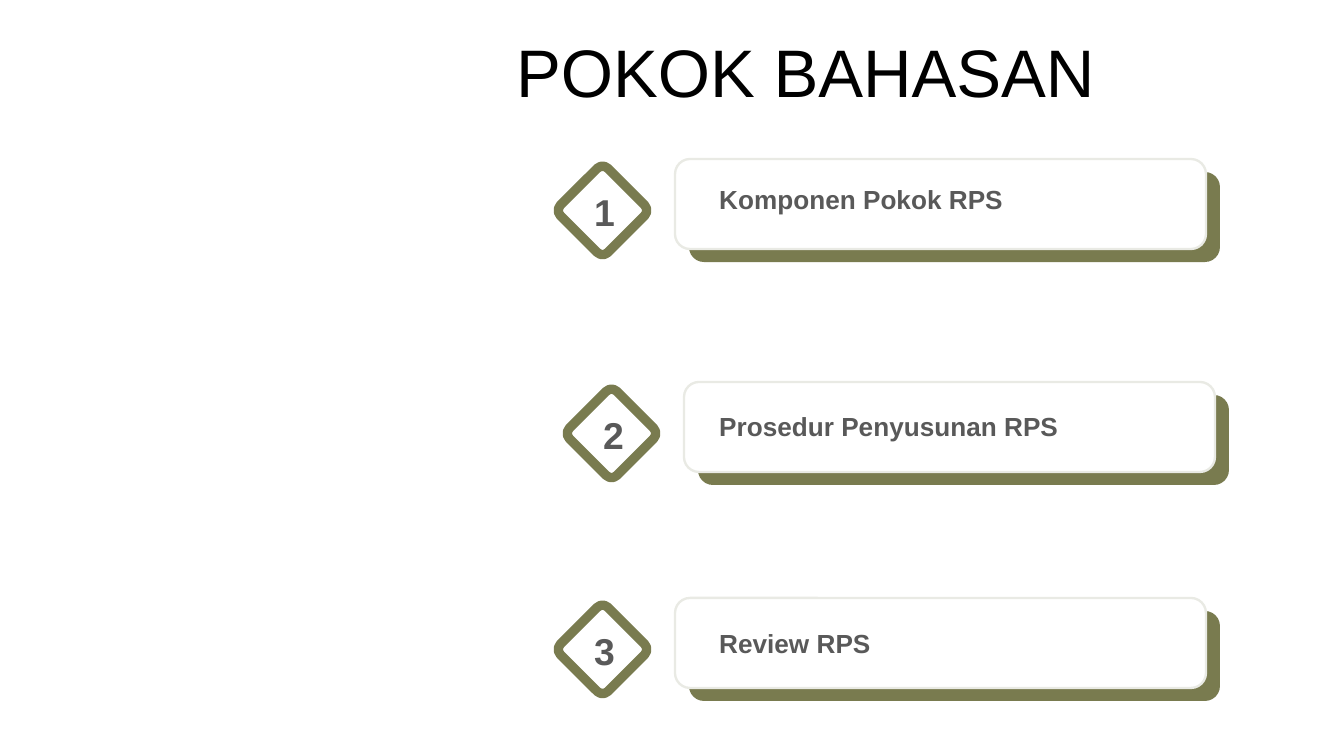
import pptx
import pptx.util
import pptx.dml.color
import pptx.enum.shapes
import pptx.enum.text

RGBColor = pptx.dml.color.RGBColor
ROUNDED = pptx.enum.shapes.MSO_SHAPE.ROUNDED_RECTANGLE
ALIGN = pptx.enum.text.PP_ALIGN

BLACK = RGBColor(0x00, 0x00, 0x00)
WHITE = RGBColor(0xFF, 0xFF, 0xFF)
OLIVE = RGBColor(0x79, 0x7B, 0x4F)
PALE = RGBColor(0xE9, 0xEA, 0xE4)
GRAY = RGBColor(0x59, 0x59, 0x59)

HEADING = "POKOK BAHASAN"
TOPICS = [
    {"caption": "Komponen Pokok RPS", "left": 569, "top": 159, "caption_top": 176, "caption_width": 485},
    {"caption": "Prosedur Penyusunan RPS", "left": 578, "top": 382, "caption_top": 403, "caption_width": 445},
    {"caption": "Review RPS", "left": 569, "top": 598, "caption_top": 620, "caption_width": 445},
]

CARD_DX, CARD_WIDTH, CARD_HEIGHT = 106, 531, 90
SHADOW_DX, SHADOW_DY = 14, 13
DIAMOND_DY, DIAMOND_SIZE = 18, 67
NUMBER_DX, NUMBER_DY, NUMBER_WIDTH, NUMBER_HEIGHT = 12, 23, 44, 59
CAPTION_LEFT, CAPTION_HEIGHT = 706, 46


def px(length):
    return pptx.util.Emu(round(length * 914400 / 134.4))


def add_rounded(shapes, left, top, width, height, fill, line=None, weight=0):
    rounded = shapes.add_shape(ROUNDED, px(left), px(top), px(width), px(height))
    rounded.shadow.inherit = False
    rounded.fill.solid()
    rounded.fill.fore_color.rgb = fill
    if line is None:
        rounded.line.fill.background()
    else:
        rounded.line.color.rgb = line
        rounded.line.width = pptx.util.Pt(weight)
    return rounded


def add_label(shapes, text, left, top, width, height, size, color, bold=False, align=ALIGN.LEFT):
    frame = shapes.add_textbox(px(left), px(top), px(width), px(height)).text_frame
    frame.word_wrap = True
    frame.vertical_anchor = pptx.enum.text.MSO_ANCHOR.MIDDLE
    paragraph = frame.paragraphs[0]
    paragraph.text = text
    paragraph.alignment = align
    paragraph.font.name = "Arial"
    paragraph.font.size = pptx.util.Pt(size)
    paragraph.font.bold = bold
    paragraph.font.color.rgb = color


def add_topic(slide, number, topic):
    shapes = slide.shapes.add_group_shape().shapes
    left, top = topic["left"], topic["top"]
    card_left = left + CARD_DX
    add_rounded(shapes, card_left + SHADOW_DX, top + SHADOW_DY, CARD_WIDTH, CARD_HEIGHT, OLIVE)
    add_rounded(shapes, card_left, top, CARD_WIDTH, CARD_HEIGHT, WHITE, PALE, 1.25)
    add_label(shapes, topic["caption"], CAPTION_LEFT, topic["caption_top"],
              topic["caption_width"], CAPTION_HEIGHT, 14, GRAY, True)
    diamond = add_rounded(shapes, left, top + DIAMOND_DY, DIAMOND_SIZE, DIAMOND_SIZE, WHITE, OLIVE, 5)
    diamond.adjustments[0] = 0.11
    diamond.rotation = 45
    add_label(shapes, str(number), left + NUMBER_DX, top + NUMBER_DY,
              NUMBER_WIDTH, NUMBER_HEIGHT, 20, GRAY, True, ALIGN.CENTER)


def main():
    deck = pptx.Presentation()
    deck.slide_width, deck.slide_height = px(1344), px(756)
    slide = deck.slides.add_slide(deck.slide_layouts[6])
    add_label(slide.shapes, HEADING, 503, 28, 841, 85, 36, BLACK)
    for number, topic in enumerate(TOPICS, 1):
        add_topic(slide, number, topic)
    deck.save("out.pptx")


if __name__ == "__main__":
    main()
